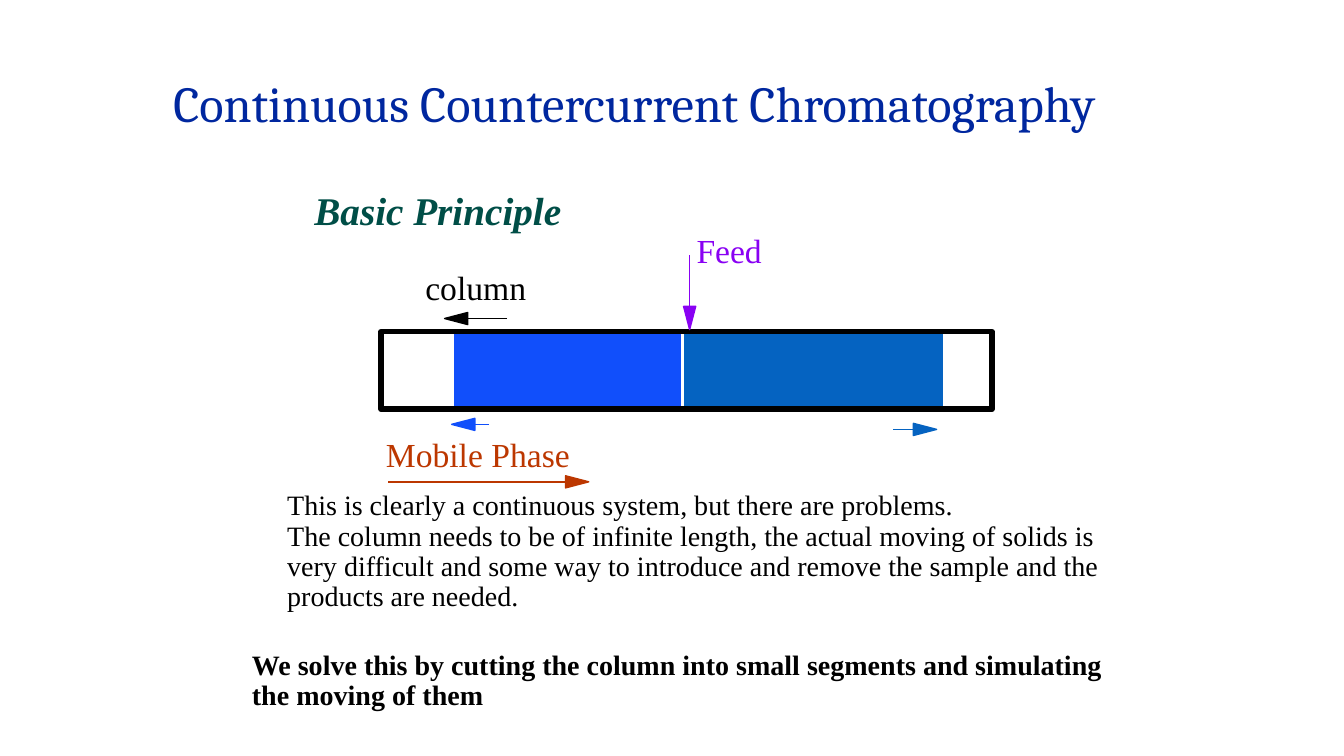
from lxml import etree
from pptx import Presentation
from pptx.dml.color import RGBColor
from pptx.enum.shapes import MSO_CONNECTOR, MSO_SHAPE
from pptx.enum.text import MSO_AUTO_SIZE as AutoSize, PP_ALIGN
from pptx.oxml.ns import qn
from pptx.util import Pt

PX = 9144  # EMU per px, 100 px to the inch
HEAD_LENGTH, HEAD_HALF_WIDTH = 23, 6
SERIF = "Times New Roman"
COLORS = {
    "black": "000000",
    "navy": "00279F",
    "green": "004E47",
    "purple": "8901F3",
    "rust": "BC3700",
    "left blue": "114FFB",
    "right blue": "0563C1",
}


def rgb(name):
    return RGBColor.from_string(COLORS[name])


def style_shape(shape, color, line_width=1, filled=True):
    shape.shadow.inherit = False
    if filled:
        shape.fill.solid()
        shape.fill.fore_color.rgb = rgb(color)
    else:
        shape.fill.background()
    shape.line.color.rgb = rgb(color)
    shape.line.width = Pt(line_width)


presentation = Presentation()
presentation.slide_width = 1333 * PX
presentation.slide_height = 750 * PX
slide = presentation.slides.add_slide(presentation.slide_layouts[6])
shapes = slide.shapes

# Column: two moving zones inside an outlined bed
column_parts = [
    (451, 224, "left blue", 1, True),
    (679, 256, "right blue", 1, True),
    (378, 606, "black", 4, False),
]
for left, width, color, line_width, filled in column_parts:
    part = shapes.add_shape(MSO_SHAPE.RECTANGLE, left * PX, 329 * PX, width * PX, 77 * PX)
    style_shape(part, color, line_width, filled)

# Arrows: tail, tip, unit direction
arrows = [
    (503, 316, 441, 316, -1, 0, "black"),
    (485, 421, 448, 421, -1, 0, "left blue"),
    (886, 426, 929, 426, 1, 0, "right blue"),
    (684, 253, 684, 327, 0, 1, "purple"),
    (385, 478, 584, 478, 1, 0, "rust"),
]
for tail_x, tail_y, tip_x, tip_y, dx, dy, color in arrows:
    base_x, base_y = tip_x - HEAD_LENGTH * dx, tip_y - HEAD_LENGTH * dy
    shaft = shapes.add_connector(
        MSO_CONNECTOR.STRAIGHT, tail_x * PX, tail_y * PX, base_x * PX, base_y * PX)
    shaft.line.color.rgb = rgb(color)
    shaft.line.width = Pt(1)
    etree.SubElement(shaft._element.spPr, qn("a:effectLst"))

    side_x, side_y = HEAD_HALF_WIDTH * dy, HEAD_HALF_WIDTH * dx
    builder = shapes.build_freeform(tip_x, tip_y, scale=PX)
    builder.add_line_segments(
        [(base_x + side_x, base_y + side_y), (base_x - side_x, base_y - side_y)], close=True)
    style_shape(builder.convert_to_shape(), color)

# Texts: box, size, font, colour, bold, italic, lines
texts = [
    (162, 73, 1079, 66, 36, "Cambria", "navy", False, False,
     ["Continuous Countercurrent Chromatography"]),
    (302, 185, 267, 52, 28, SERIF, "green", True, True, ["Basic Principle"]),
    (681, 228, 85, 46, 24, SERIF, "purple", False, False, ["Feed"]),
    (412, 264, 121, 46, 24, SERIF, "black", False, False, ["column"]),
    (373, 430, 204, 46, 24, SERIF, "rust", False, False, ["Mobile Phase"]),
    (275, 483, 829, 130, 20, SERIF, "black", False, False,
     ["This is clearly a continuous system, but there are problems.",
      "The column needs to be of infinite length, the actual moving of solids is",
      "very difficult and some way to introduce and remove the sample and the",
      "products are needed."]),
    (240, 641, 869, 70, 20, SERIF, "black", True, False,
     ["We solve this by cutting the column into small segments and simulating",
      "the moving of them"]),
]
for left, top, width, height, size, font_name, color, bold, italic, lines in texts:
    box = shapes.add_textbox(left * PX, top * PX, width * PX, height * PX)
    text_frame = box.text_frame
    text_frame.text = "\n".join(lines)
    text_frame.word_wrap = False
    text_frame.auto_size = AutoSize.SHAPE_TO_FIT_TEXT
    for paragraph in text_frame.paragraphs:
        paragraph.alignment = PP_ALIGN.LEFT
        paragraph.line_spacing = 0.9
        font = paragraph.runs[0].font
        font.name, font.size = font_name, Pt(size)
        font.bold, font.italic = bold, italic
        font.color.rgb = rgb(color)

presentation.save("out.pptx")
